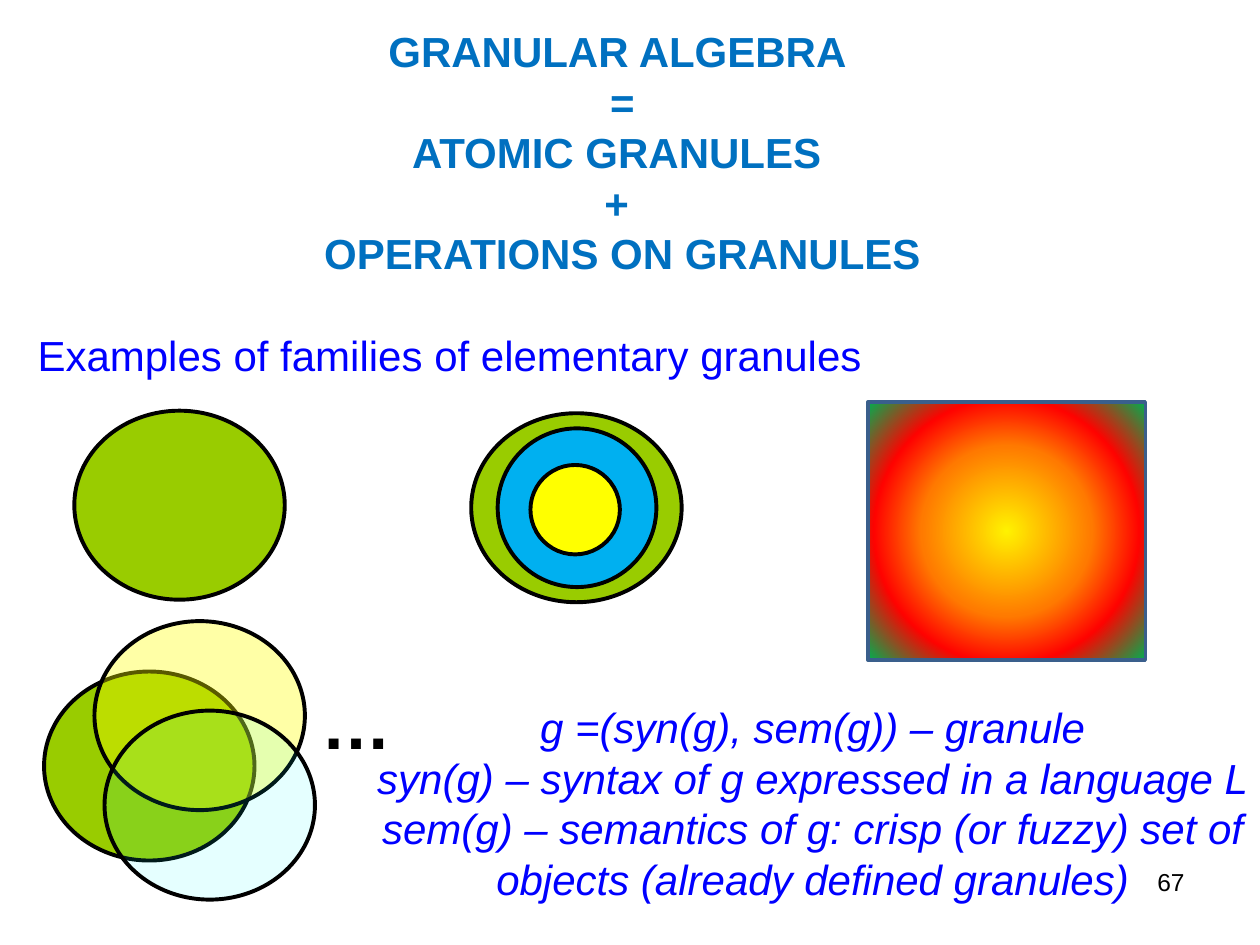
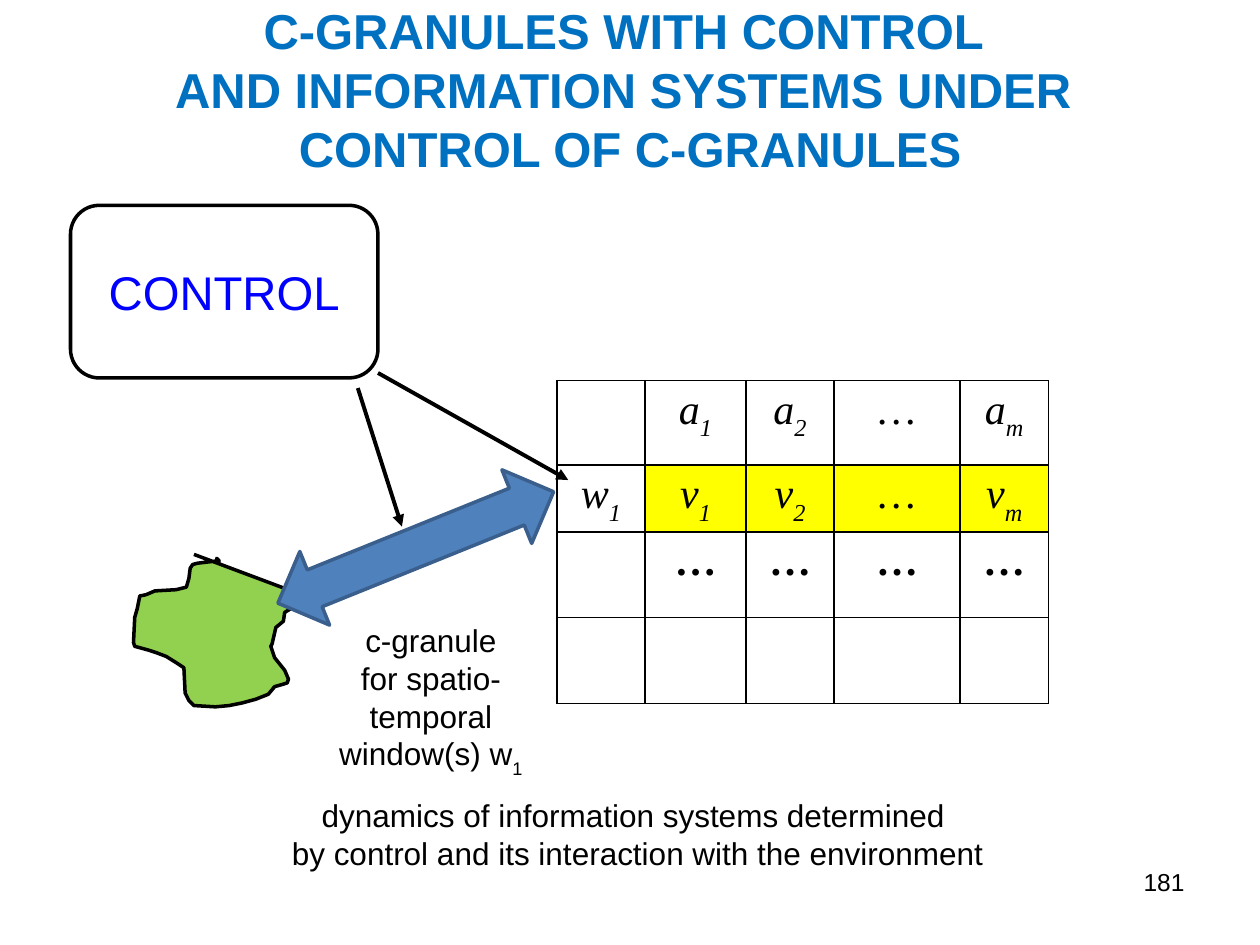
from lxml import etree
from pptx import Presentation
from pptx import util as u
from pptx.dml.color import RGBColor
from pptx.enum import shapes, text
from pptx.oxml import parse_xml
from pptx.oxml.ns import nsdecls, qn

# Shared look
BLACK, WHITE, HEADING, BLUE = "000000", "FFFFFF", "0070C0", "0000FF"
GREEN, SKY, YELLOW, CYAN = "99CC00", "00B0F0", "FFFF00", "00FFFF"
ARROW_FILL, STEEL, LEAF = "4F81BD", "3A5F8C", "92D050"
SANS, SERIF = "Arial", "Times New Roman"
OVAL, BOX = shapes.MSO_SHAPE.OVAL, shapes.MSO_SHAPE.RECTANGLE
ALIGN = text.PP_ALIGN
PAGE_NUMBER_BOX = (7.17, 6.83, 2.33, 0.52)

# Slide 1: elementary granules
ALGEBRA_TITLE = ["GRANULAR ALGEBRA ", "=", "ATOMIC GRANULES ", "+ ",
                 "OPERATIONS ON GRANULES"]
EXAMPLES = ["Examples of families of elementary granules"]
DEFINITIONS = [
    "g =(syn(g), sem(g)) – granule",
    "syn(g) – syntax of g expressed in a language L",
    "sem(g) – semantics of g: crisp (or fuzzy) set of objects "
    "(already defined granules)",
]
GRANULE = (1.67, 1.5)
# Families of ellipses: left, top, size, colour, opacity in percent
FAMILIES = [
    [(0.59, 3.26, GRANULE, GREEN, 100)],
    [(3.74, 3.28, GRANULE, GREEN, 100),
     (3.95, 3.4, (1.26, 1.26), SKY, 100),
     (4.21, 3.69, (0.71, 0.71), YELLOW, 100)],
    [(0.35, 5.33, GRANULE, GREEN, 100),
     (0.75, 4.93, GRANULE, YELLOW, 35),
     (0.83, 5.64, GRANULE, CYAN, 10)],
]
FUZZY_STOPS = [(0, "FFF200"), (45, "FF7A00"), (70, "FF0300"), (100, "00B050")]

# Slide 2: control (an underscore starts a subscript)
CONTROL_TITLE = ["C-GRANULES WITH CONTROL ", "AND INFORMATION SYSTEMS UNDER ",
                 "CONTROL OF C-GRANULES"]
WINDOW_LABEL = ["c-granule", "for spatio-temporal window(s) w_1"]
DYNAMICS = ["dynamics of information systems determined ",
            "by control and its interaction with the environment"]
COLUMNS = [0.7, 0.8, 0.7, 1, 0.7]
ROWS = [0.67, 0.53, 0.68, 0.68]
INFORMATION_SYSTEM = [
    ["", "a_1", "a_2", "…", "a_m"],
    ["w_1", "v_1", "v_2", "…", "v_m"],
    ["", "…", "…", "…", "…"],
    ["", "", "", "", ""],
]
VALUE_ROW, DOTS_ROW = 1, 2
CONTROL_ARROWS = [((2.84, 3.08), (3.19, 4.18)), ((3, 2.96), (4.51, 3.81))]
ENVIRONMENT_OUTLINE = [
    (1.54, 4.4), (2.5, 4.76), (2.44, 4.78), (2.31, 4.83), (2.26, 4.86),
    (2.25, 4.93), (2.19, 4.98), (2.16, 5.11), (2.15, 5.13), (2.18, 5.22),
    (2.26, 5.32), (2.29, 5.39), (2.28, 5.42), (2.25, 5.43), (2.18, 5.45),
    (2.13, 5.51), (2.03, 5.55), (1.92, 5.58), (1.82, 5.6), (1.71, 5.61),
    (1.54, 5.6), (1.5, 5.56), (1.47, 5.5), (1.46, 5.3), (1.4, 5.26),
    (1.32, 5.21), (1.24, 5.18), (1.18, 5.16), (1.07, 5.13), (1.06, 5.1),
    (1.07, 4.9), (1.09, 4.83), (1.11, 4.73), (1.16, 4.72), (1.23, 4.69),
    (1.4, 4.68), (1.48, 4.66), (1.5, 4.59), (1.51, 4.51), (1.53, 4.48),
    (1.57, 4.47), (1.74, 4.45), (1.72, 4.43), (1.74, 4.47),
]


def color(hex_string):
    return RGBColor.from_string(hex_string)


def inches(values):
    return [u.Inches(value) for value in values]


def style(paragraph, size, hue=BLACK, font=SANS, align=ALIGN.CENTER,
          bold=False, italic=False):
    paragraph.alignment = align
    paragraph.font.name, paragraph.font.size = font, u.Pt(size)
    paragraph.font.bold, paragraph.font.italic = bold, italic
    paragraph.font.color.rgb = color(hue)


def write(paragraph, content, size, **look):
    base, _, subscript = content.partition("_")
    paragraph.add_run().text = base
    if subscript:
        run = paragraph.add_run()
        run.text = subscript
        run._r.get_or_add_rPr().set("baseline", "-30000")
    style(paragraph, size, **look)


def write_lines(frame, lines, size, **look):
    frame.word_wrap = True
    for index, line in enumerate(lines):
        paragraph = frame.add_paragraph() if index else frame.paragraphs[0]
        write(paragraph, line, size, **look)


def add_text(slide, place, lines, size, inset=None, **look):
    frame = slide.shapes.add_textbox(*inches(place)).text_frame
    if inset is not None:
        frame.margin_left = frame.margin_right = u.Inches(inset)
        frame.margin_top = frame.margin_bottom = u.Inches(inset)
    write_lines(frame, lines, size, **look)


def paint(shape, fill, line=BLACK, width=2.25, opacity=100):
    shape.shadow.inherit = False
    shape.line.color.rgb, shape.line.width = color(line), u.Pt(width)
    shape.fill.solid()
    shape.fill.fore_color.rgb = color(fill)
    if opacity < 100:
        solid = shape._element.spPr.find(qn("a:solidFill"))
        etree.SubElement(solid[0], qn("a:alpha"), val=str(opacity * 1000))


def paint_radial(shape, stops):
    marks = "".join(f'<a:gs pos="{position * 1000}"><a:srgbClr val="{hue}"/></a:gs>'
                    for position, hue in stops)
    gradient = parse_xml(
        f'<a:gradFill {nsdecls("a")} rotWithShape="1"><a:gsLst>{marks}</a:gsLst>'
        '<a:path path="circle"><a:fillToRect l="50000" t="50000" r="50000" '
        'b="50000"/></a:path></a:gradFill>')
    properties = shape._element.spPr
    properties.replace(properties.find(qn("a:solidFill")), gradient)


def add_arrow(slide, start, end):
    connector = slide.shapes.add_connector(
        shapes.MSO_CONNECTOR.STRAIGHT, *inches(start + end))
    connector.line.color.rgb, connector.line.width = color(BLACK), u.Pt(2.25)
    properties = connector._element.spPr
    etree.SubElement(properties.find(qn("a:ln")), qn("a:tailEnd"), type="triangle")
    etree.SubElement(properties, qn("a:effectLst"))


def add_borders(cell):
    properties = cell._tc.get_or_add_tcPr()
    for index, side in enumerate("LRTB"):
        properties.insert(index, parse_xml(
            f'<a:ln{side} {nsdecls("a")} w="12700"><a:solidFill>'
            f'<a:srgbClr val="{BLACK}"/></a:solidFill></a:ln{side}>'))


def add_information_system(slide, left, top):
    place = inches((left, top, sum(COLUMNS), sum(ROWS)))
    table = slide.shapes.add_table(len(ROWS), len(COLUMNS), *place).table
    table.first_row = table.horz_banding = False
    for column, width in zip(table.columns, COLUMNS):
        column.width = u.Inches(width)
    for row, height in zip(table.rows, ROWS):
        row.height = u.Inches(height)
    for r, values in enumerate(INFORMATION_SYSTEM):
        for c, value in enumerate(values):
            cell = table.cell(r, c)
            cell.margin_bottom = u.Inches(0.01)
            cell.fill.solid()
            highlighted = r == VALUE_ROW and c > 0
            cell.fill.fore_color.rgb = color(YELLOW if highlighted else WHITE)
            add_borders(cell)
            if value:
                write(cell.text_frame.paragraphs[0], value, 24, font=SERIF,
                      bold=r == DOTS_ROW, italic=r != DOTS_ROW)


def start_slide(presentation, lines, place, size, number):
    slide = presentation.slides.add_slide(presentation.slide_layouts[5])
    title = slide.shapes.title
    title.left, title.top, title.width, title.height = inches(place)
    frame = title.text_frame
    frame.auto_size = text.MSO_AUTO_SIZE.NONE
    frame.vertical_anchor = text.MSO_ANCHOR.MIDDLE
    frame.text = "\v".join(lines)
    style(frame.paragraphs[0], size, hue=HEADING, bold=True)
    add_text(slide, PAGE_NUMBER_BOX, [number], 14, align=ALIGN.RIGHT)
    return slide


def build_algebra(presentation):
    slide = start_slide(presentation, ALGEBRA_TITLE, (0.04, 0.01, 9.8, 2.39), 24, "67")
    # Crisp, nested and overlapping granules
    for family in FAMILIES:
        group = slide.shapes.add_group_shape()
        for left, top, size, hue, opacity in family:
            ellipse = group.shapes.add_shape(OVAL, *inches((left, top, *size)))
            paint(ellipse, hue, opacity=opacity)
    # Fuzzy granule
    fuzzy = slide.shapes.add_shape(BOX, *inches((6.89, 3.19, 2.2, 2.05)))
    paint(fuzzy, YELLOW, line=STEEL, width=2)
    paint_radial(fuzzy, FUZZY_STOPS)
    # Captions
    add_text(slide, (2.45, 5.34, 1.02, 0.77), ["…"], 40, align=ALIGN.LEFT, bold=True)
    add_text(slide, (2.97, 5.57, 6.96, 1.62), DEFINITIONS, 24, inset=0,
             hue=BLUE, italic=True)
    add_text(slide, (0.2, 2.57, 9.64, 0.5), EXAMPLES, 24, hue=BLUE, align=ALIGN.LEFT)


def build_control(presentation):
    slide = start_slide(presentation, CONTROL_TITLE, (0, 0.08, 10, 1.25), 28, "181")
    add_information_system(slide, 4.42, 3.02)
    # Control box
    control = slide.shapes.add_shape(shapes.MSO_SHAPE.ROUNDED_RECTANGLE,
                                     *inches((0.56, 1.63, 2.44, 1.37)))
    paint(control, WHITE, width=2)
    control.text_frame.vertical_anchor = text.MSO_ANCHOR.MIDDLE
    write_lines(control.text_frame, ["CONTROL"], 27, hue=BLUE)
    # Environment and its link to the table
    start, *outline = [inches(point) for point in ENVIRONMENT_OUTLINE]
    builder = slide.shapes.build_freeform(*start)
    builder.add_line_segments(outline, close=False)
    paint(builder.convert_to_shape(), LEAF, width=2)
    link = slide.shapes.add_shape(shapes.MSO_SHAPE.LEFT_RIGHT_ARROW,
                                  *inches((2.12, 4.03, 2.36, 0.63)))
    link.rotation = 338
    paint(link, ARROW_FILL, line=STEEL, width=2)
    for start, end in CONTROL_ARROWS:
        add_arrow(slide, start, end)
    # Captions
    add_text(slide, (2.55, 4.88, 1.74, 1.31), WINDOW_LABEL, 18)
    add_text(slide, (2.07, 6.27, 5.98, 0.71), DYNAMICS, 18)


def main():
    presentation = Presentation()
    presentation.slide_width, presentation.slide_height = inches((10, 7.5))
    build_algebra(presentation)
    build_control(presentation)
    presentation.save("out.pptx")


if __name__ == "__main__":
    main()
